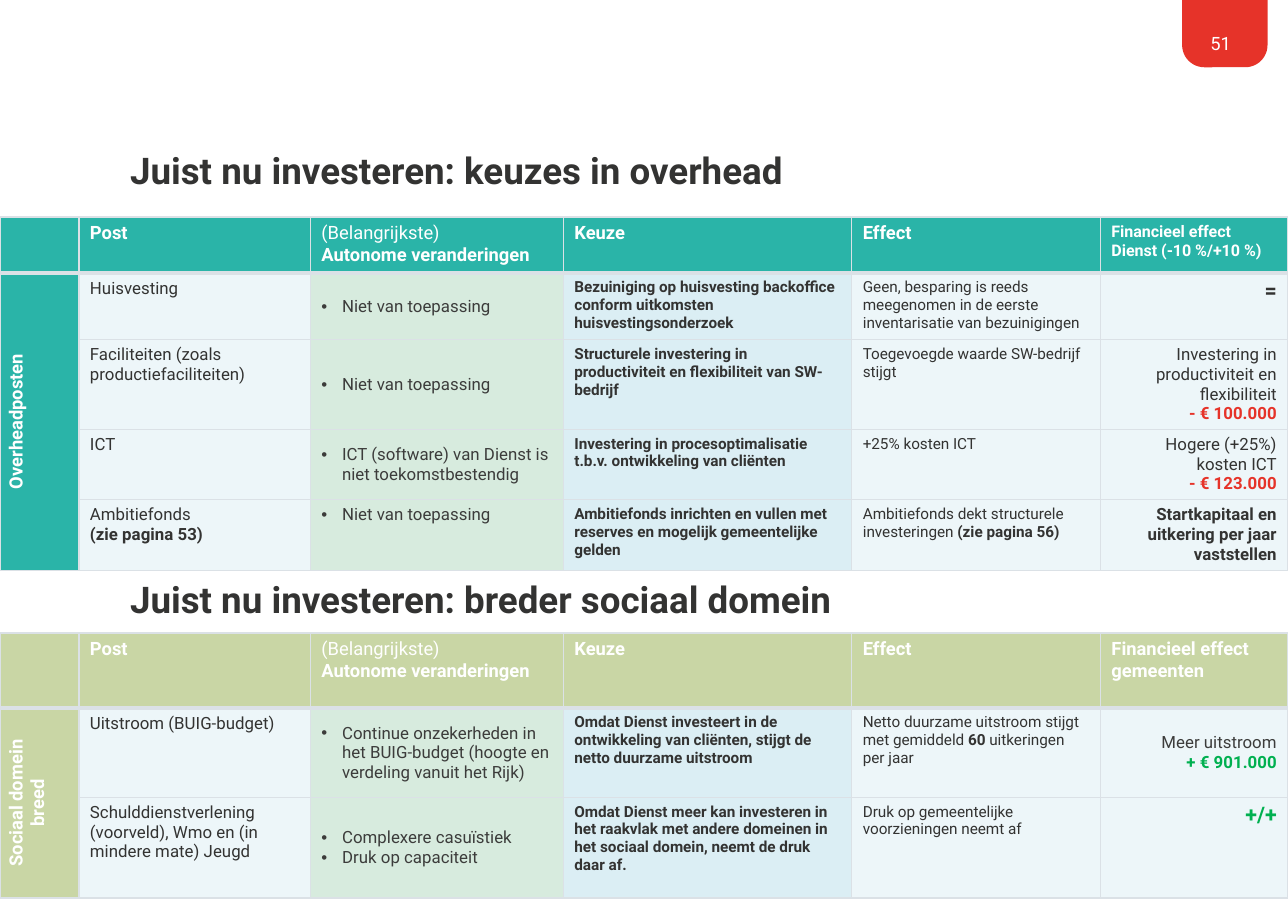
from lxml.etree import SubElement
from pptx import Presentation
from pptx.dml.color import RGBColor
from pptx.enum.shapes import MSO_SHAPE as Shape
from pptx.enum.text import MSO_ANCHOR as Anchor, MSO_AUTO_SIZE as AutoSize, PP_ALIGN as Align
from pptx.oxml import parse_xml
from pptx.oxml.ns import nsdecls, qn
from pptx.util import Pt

RED = RGBColor(0xE6, 0x33, 0x29)
GREEN = RGBColor(0x00, 0xB0, 0x50)
TEAL = RGBColor(0x2A, 0xB4, 0xA8)
OLIVE = RGBColor(0xC9, 0xD6, 0xA5)
DARK = RGBColor(0x33, 0x33, 0x32)
CHARCOAL = RGBColor(0x3C, 0x3C, 0x3B)
WHITE = RGBColor(0xFF, 0xFF, 0xFF)
PALE = RGBColor(0xED, 0xF6, 0xF9)
MINT = RGBColor(0xD7, 0xEB, 0xDE)
SKY = RGBColor(0xDB, 0xEE, 0xF4)
RULE = RGBColor(0xDB, 0xE1, 0xE6)

# Run styles that differ from the style of their column
LIGHT = dict(bold=False)
BOLD = dict(bold=True)
SMALL = dict(size=10.5)
LOSS = dict(bold=True, color=RED)
GAIN = dict(bold=True, color=GREEN)
SIGN = dict(bold=True, size=14)
GAIN_SIGN = dict(bold=True, size=14, color=GREEN)

# A cell is a list of paragraphs, a paragraph a list of (text, style) runs
def plain(*paragraphs):
    return [[(text, {})] for text in paragraphs]


HEADINGS = [
    [], plain("Post"),
    [[("(Belangrijkste)\n", LIGHT), ("Autonome veranderingen", {})]],
    plain("Keuze"), plain("Effect"),
]
OVERHEAD = [
    HEADINGS + [[[("Financieel effect Dienst (-10 %/+10 %)", SMALL)]]],
    [plain("Overheadposten"), plain("Huisvesting"), plain("Niet van toepassing"),
     plain("Bezuiniging op huisvesting backoffice conform uitkomsten huisvestingsonderzoek"),
     plain("Geen, besparing is reeds meegenomen in de eerste inventarisatie van bezuinigingen"),
     [[("=", SIGN)]]],
    [[], plain("Faciliteiten (zoals productiefaciliteiten)"), plain("Niet van toepassing"),
     plain("Structurele investering in productiviteit en flexibiliteit van SW-bedrijf"),
     plain("Toegevoegde waarde SW-bedrijf stijgt"),
     [[("Investering in productiviteit en flexibiliteit\n", {}), ("- € 100.000", LOSS)]]],
    [[], plain("ICT"), plain("ICT (software) van Dienst is niet toekomstbestendig"),
     plain("Investering in procesoptimalisatie t.b.v. ontwikkeling van cliënten"),
     plain("+25% kosten ICT"),
     [[("Hogere (+25%)\nkosten ICT\n", {}), ("- € 123.000", LOSS)]]],
    [[], [[("Ambitiefonds\n", {}), ("(zie pagina 53)", BOLD)]], plain("Niet van toepassing"),
     plain("Ambitiefonds inrichten en vullen met reserves en mogelijk gemeentelijke gelden"),
     [[("Ambitiefonds dekt structurele investeringen ", {}), ("(zie pagina 56)", BOLD)]],
     [[("Startkapitaal en uitkering per jaar vaststellen", BOLD)]]],
]
SOCIAL = [
    HEADINGS + [plain("Financieel effect gemeenten")],
    [plain("Sociaal domein breed"), plain("Uitstroom (BUIG-budget)"),
     plain("Continue onzekerheden in het BUIG-budget (hoogte en verdeling vanuit het Rijk)"),
     plain("Omdat Dienst investeert in de ontwikkeling van cliënten, stijgt de netto duurzame "
           "uitstroom"),
     [[("Netto duurzame uitstroom stijgt met gemiddeld ", {}), ("60", BOLD),
       (" uitkeringen per jaar", {})]],
     [[("Meer uitstroom\n", dict(color=CHARCOAL)), ("+ € 901.000", GAIN)]]],
    [[], plain("Schulddienstverlening (voorveld), Wmo en (in mindere mate) Jeugd"),
     plain("Complexere casuïstiek", "Druk op capaciteit"),
     plain("Omdat Dienst meer kan investeren in het raakvlak met andere domeinen in het sociaal "
           "domein, neemt de druk daar af."),
     plain("Druk op gemeentelijke voorzieningen neemt af"),
     [[("+/+", GAIN_SIGN)]]],
]
# title, title top, rows, table top, row heights, accent, anchors by (row, column)
SECTIONS = [
    ("Juist nu investeren: keuzes in overhead", 73.5, OVERHEAD, 141.8,
     [36.7, 43.7, 58.4, 46, 46], TEAL, {(4, 2): Anchor.TOP}),
    ("Juist nu investeren: breder sociaal domein", 353.8, SOCIAL, 413.8,
     [49.2, 58.3, 65.4], OLIVE, {(1, 5): Anchor.MIDDLE}),
]
COLUMN_WIDTHS = [51.6, 151.3, 165.3, 188.5, 162.5, 122.5]
HEADING_STYLE = dict(size=12, bold=True, color=WHITE)
COLUMN_STYLES = [
    HEADING_STYLE,
    dict(size=11, bold=False, color=DARK),
    dict(size=11, bold=False, color=CHARCOAL),
    dict(size=10, bold=True, color=DARK),
    dict(size=10, bold=False, color=DARK),
    dict(size=11, bold=False, color=DARK),
]
COLUMN_FILLS = [None, PALE, MINT, SKY, PALE, PALE]
GROUP, CHANGES, FINANCE = 0, 2, 5


def add_run(paragraph, text, size, bold, color):
    for index, line in enumerate(text.split("\n")):
        if index:
            paragraph.add_line_break()
        if line:
            run = paragraph.add_run()
            run.text = line
            run.font.name = "Roboto"
            run.font.size = Pt(size)
            run.font.bold = bold
            run.font.color.rgb = color


def fill_frame(frame, paragraphs, style):
    for index, runs in enumerate(paragraphs):
        paragraph = frame.add_paragraph() if index else frame.paragraphs[0]
        for text, changes in runs:
            add_run(paragraph, text, **{**style, **changes})


def clear_insets(frame):
    frame.margin_left = frame.margin_right = frame.margin_top = frame.margin_bottom = 0
    frame.word_wrap = True
    frame.auto_size = AutoSize.NONE


def add_bullet(paragraph):
    props = paragraph._p.get_or_add_pPr()
    props.set("marL", str(Pt(13.5)))
    props.set("indent", str(-Pt(13.5)))
    SubElement(props, qn("a:buFont")).set("typeface", "Arial")
    SubElement(props, qn("a:buChar")).set("char", "•")


def add_borders(cell, top, bottom):
    props = cell._tc.get_or_add_tcPr()
    for index, (side, width) in enumerate([("L", 1), ("R", 1), ("T", top), ("B", bottom)]):
        props.insert(index, parse_xml(
            f'<a:ln{side} {nsdecls("a")} w="{Pt(width)}"><a:solidFill>'
            f'<a:srgbClr val="{RULE}"/></a:solidFill></a:ln{side}>'))


def add_section_table(slide, rows, top, heights, accent, anchors):
    table = slide.shapes.add_table(len(rows), len(COLUMN_WIDTHS), 0, Pt(top),
                                   Pt(sum(COLUMN_WIDTHS)), Pt(sum(heights))).table
    table.horz_banding = False
    for column, width in zip(table.columns, COLUMN_WIDTHS):
        column.width = Pt(width)
    for row, height in zip(table.rows, heights):
        row.height = Pt(height)
    table.cell(1, GROUP).merge(table.cell(len(rows) - 1, GROUP))

    for r, row in enumerate(rows):
        for c, paragraphs in enumerate(row):
            cell = table.cell(r, c)
            if cell.is_spanned:
                continue
            heading = r == 0
            cell.fill.solid()
            cell.fill.fore_color.rgb = accent if heading or c == GROUP else COLUMN_FILLS[c]
            add_borders(cell, 3 if r == 1 else 1, 3 if heading else 1)
            fill_frame(cell.text_frame, paragraphs,
                       HEADING_STYLE if heading else COLUMN_STYLES[c])
            if heading:
                continue
            usual = Anchor.MIDDLE if c == CHANGES else Anchor.TOP
            cell.vertical_anchor = anchors.get((r, c), usual)
            if c == GROUP:
                cell._tc.tcPr.set("vert", "vert270")
            for paragraph in cell.text_frame.paragraphs:
                if c == GROUP:
                    paragraph.alignment = Align.CENTER
                elif c == CHANGES:
                    add_bullet(paragraph)
                elif c == FINANCE:
                    paragraph.alignment = Align.RIGHT


def main():
    deck = Presentation()
    deck.slide_width, deck.slide_height = Pt(841.7), Pt(595.5)
    slide = deck.slides.add_slide(deck.slide_layouts[5])

    page_tab = slide.shapes.add_shape(Shape.ROUND_2_SAME_RECTANGLE,
                                      Pt(772.5), 0, Pt(55.8), Pt(44))
    page_tab.adjustments[0], page_tab.adjustments[1] = 0, 0.33
    page_tab.shadow.inherit = False
    page_tab.fill.solid()
    page_tab.fill.fore_color.rgb = RED
    page_tab.line.fill.background()

    page_number = slide.shapes.add_textbox(Pt(779), Pt(21), Pt(37.5), Pt(26)).text_frame
    clear_insets(page_number)
    fill_frame(page_number, plain("51"), dict(size=12, bold=False, color=WHITE))
    page_number.paragraphs[0].alignment = Align.CENTER

    for index, (title, title_top, rows, top, heights, accent, anchors) in enumerate(SECTIONS):
        box = (Pt(85), Pt(title_top), Pt(674.6), Pt(51.8))
        if index:
            heading = slide.shapes.add_textbox(*box)
        else:
            heading = slide.shapes.title
            heading.left, heading.top, heading.width, heading.height = box
        clear_insets(heading.text_frame)
        heading.text_frame.vertical_anchor = Anchor.BOTTOM
        fill_frame(heading.text_frame, plain(title), dict(size=24, bold=True, color=DARK))
        heading.text_frame.paragraphs[0].alignment = Align.LEFT
        add_section_table(slide, rows, top, heights, accent, anchors)

    deck.save("out.pptx")


if __name__ == "__main__":
    main()
